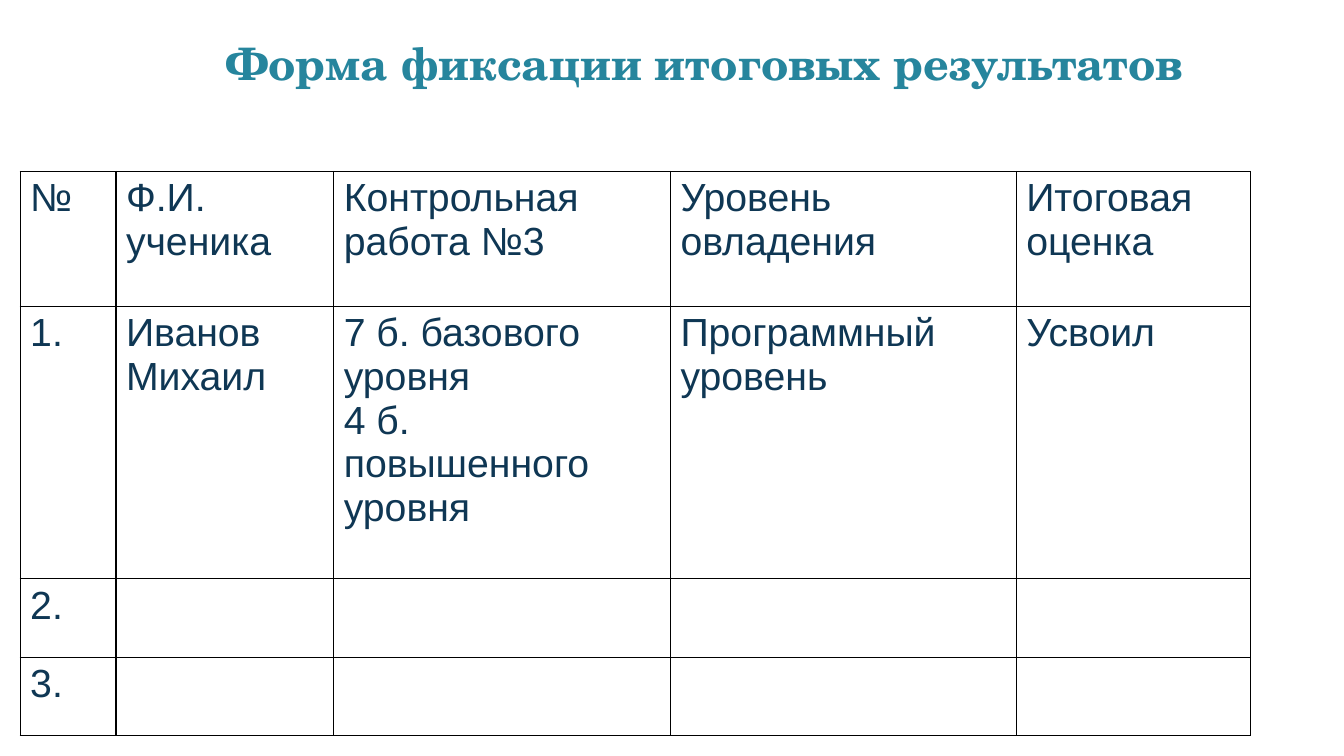
import pptx
import pptx.dml.color
import pptx.enum.text
import pptx.oxml
import pptx.oxml.ns
import pptx.util
from pptx.util import Inches

TITLE_COLOUR = "26859D"
TEXT_COLOUR = "0F3754"
BORDER_COLOUR = "000000"

COLUMN_WIDTHS = [0.95, 2.16, 3.34, 3.43, 2.32]
ROW_HEIGHTS = [1.34, 2.7, 0.78, 0.78]
RESULTS = [
    ["№", "Ф.И. ученика", "Контрольная работа №3",
     "Уровень\nовладения", "Итоговая\nоценка"],
    ["1.", "Иванов Михаил", "7 б. базового уровня\n4 б. повышенного уровня",
     "Программный\nуровень", "Усвоил"],
    ["2.", "", "", "", ""],
    ["3.", "", "", "", ""],
]


def colour(value):
    return pptx.dml.color.RGBColor.from_string(value)


class SlideBuilder:
    title_font = "TeX Gyre Schola"
    body_font = "Arial"

    def __init__(self, presentation):
        self.slide = presentation.slides.add_slide(presentation.slide_layouts[6])

    def add_run(self, paragraph, text, font, size, text_colour, bold=False):
        run = paragraph.add_run()
        run.text = text
        run.font.name = font
        run.font.size = pptx.util.Pt(size)
        run.font.bold = bold
        run.font.color.rgb = colour(text_colour)

    def add_title(self, text, left, top, width, height):
        shape = self.slide.shapes.add_textbox(
            Inches(left), Inches(top), Inches(width), Inches(height))
        frame = shape.text_frame
        frame.word_wrap = True
        frame.vertical_anchor = pptx.enum.text.MSO_ANCHOR.MIDDLE
        paragraph = frame.paragraphs[0]
        paragraph.line_spacing = 0.9
        self.add_run(paragraph, text, self.title_font, 32, TITLE_COLOUR, bold=True)

    def add_table(self, rows, left, top, column_widths, row_heights):
        table = self.slide.shapes.add_table(
            len(rows), len(column_widths), Inches(left), Inches(top),
            Inches(sum(column_widths)), Inches(sum(row_heights))).table
        table.first_row = False
        table.horz_banding = False
        for column, width in zip(table.columns, column_widths):
            column.width = Inches(width)
        for row, height, texts in zip(table.rows, row_heights, rows):
            row.height = Inches(height)
            for cell, text in zip(row.cells, texts):
                self.fill_cell(cell, text)

    def fill_cell(self, cell, text):
        self.add_borders(cell)
        cell.fill.background()
        if not text:
            return
        frame = cell.text_frame
        for index, line in enumerate(text.split("\n")):
            paragraph = frame.add_paragraph() if index else frame.paragraphs[0]
            self.add_run(paragraph, line, self.body_font, 28, TEXT_COLOUR)

    def add_borders(self, cell):
        """Draw a one-point line on each side; must precede the cell fill."""
        properties = cell._tc.get_or_add_tcPr()
        for side in ("lnL", "lnR", "lnT", "lnB"):
            properties.append(pptx.oxml.parse_xml(
                f'<a:{side} {pptx.oxml.ns.nsdecls("a")} w="{pptx.util.Pt(1)}">'
                f'<a:solidFill><a:srgbClr val="{BORDER_COLOUR}"/></a:solidFill>'
                f'</a:{side}>'))


def main():
    presentation = pptx.Presentation()
    presentation.slide_width = Inches(13.33)
    presentation.slide_height = Inches(7.5)
    builder = SlideBuilder(presentation)
    builder.add_title("Форма фиксации итоговых результатов", 2.15, 0.39, 10.51, 0.53)
    builder.add_table(RESULTS, 0.2, 1.7, COLUMN_WIDTHS, ROW_HEIGHTS)
    presentation.save("out.pptx")


if __name__ == "__main__":
    main()
